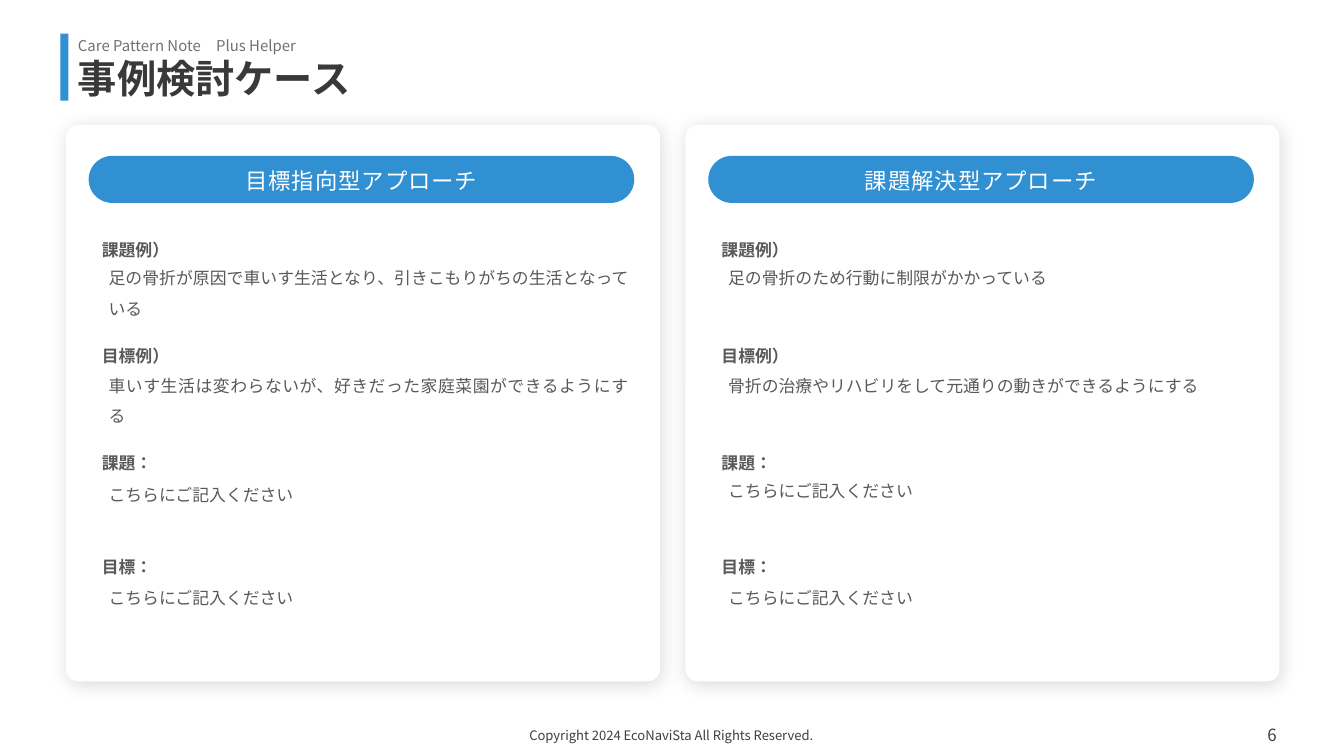
"""Build the case-study slide comparing two care approaches."""
from lxml.etree import SubElement
from pptx import Presentation
from pptx.dml.color import RGBColor
from pptx.enum.lang import MSO_LANGUAGE_ID
from pptx.enum.shapes import MSO_SHAPE
from pptx.enum.text import MSO_ANCHOR, MSO_AUTO_SIZE, PP_ALIGN
from pptx.oxml.ns import qn
from pptx.util import Inches, Pt

FONT = "Noto Sans CJK JP"
COLORS = {"bar": "3190D1", "pill": "3090D2", "white": "FFFFFF", "title": "3A3838",
          "product": "757070", "footer": "3F3F3F", "body": "595959", "shadow": "000000"}

prs = Presentation()
prs.slide_width, prs.slide_height = Inches(10), Inches(10 * 9 / 16)
s = prs.slides.add_slide(prs.slide_layouts[6])


def add_box(left, top, width, height, shape=None, fill=None, radius=None):
    box = [Inches(v) for v in (left, top, width, height)]
    if shape is None:
        return s.shapes.add_textbox(*box)
    sp = s.shapes.add_shape(shape, *box)
    sp.shadow.inherit = False
    sp.fill.solid()
    sp.fill.fore_color.rgb = RGBColor.from_string(COLORS[fill])
    sp.line.fill.background()
    if radius is not None:
        sp.adjustments[0] = radius
    return sp


def write(sp, text, size, color, bold=False, align=PP_ALIGN.LEFT, spacing=None,
          anchor=MSO_ANCHOR.TOP, insets=(0.1, 0.05, 0.1, 0.05)):
    tf = sp.text_frame
    tf.word_wrap = True
    tf.vertical_anchor = anchor
    tf.margin_left, tf.margin_top, tf.margin_right, tf.margin_bottom = map(Inches, insets)
    tf.text = text
    p = tf.paragraphs[0]
    p.alignment = align
    if spacing:
        p.line_spacing = spacing
    r = p.runs[0]
    r.font.name, r.font.size, r.font.bold = FONT, Pt(size), bold
    r.font.language_id = MSO_LANGUAGE_ID.JAPANESE
    r.font.color.rgb = RGBColor.from_string(COLORS[color])
    SubElement(r._r.get_or_add_rPr(), qn("a:ea"), typeface=FONT)
    return r


write(add_box(0.58, 0.27, 2.07, 0.13), "Care Pattern Note　Plus Helper", 8, "product",
      insets=(0, 0, 0, 0))
add_box(0.45, 0.25, 0.06, 0.5, MSO_SHAPE.RECTANGLE, "bar")
write(add_box(0.58, 0.44, 8.87, 0.33), "事例検討ケース", 21, "title", bold=True, spacing=0.9,
      anchor=MSO_ANCHOR.MIDDLE, insets=(0, 0, 0, 0))

footers = [(7.9, 1.67, "6", 9, PP_ALIGN.RIGHT),
           (2.93, 4.13, "Copyright 2024 EcoNaviSta All Rights Reserved.", 7, PP_ALIGN.CENTER)]
for left, width, text, size, align in footers:
    write(add_box(left, 5.32, width, 0.3), text, size, "footer", align=align,
          anchor=MSO_ANCHOR.MIDDLE, insets=(0.07, 0.04, 0.07, 0.04))

ENTRY = "こちらにご記入ください"
labels = [("課題例）", 1.66), ("目標例）", 2.45), ("課題：", 3.24), ("目標：", 4.02)]
columns = [
    (0.49, "目標指向型アプローチ", [
        ("足の骨折が原因で車いす生活となり、引きこもりがちの生活となっている", 1.87, 0.54),
        ("車いす生活は変わらないが、好きだった家庭菜園ができるようにする", 2.67, 0.54),
        (ENTRY, 3.48, 0.54), (ENTRY, 4.25, 0.54)]),
    (5.1, "課題解決型アプローチ", [
        ("足の骨折のため行動に制限がかかっている", 1.87, 0.31),
        ("骨折の治療やリハビリをして元通りの動きができるようにする", 2.67, 0.31),
        (ENTRY, 3.45, 0.54), (ENTRY, 4.25, 0.54)]),
]
for left, heading, answers in columns:
    card = add_box(left, 0.93, 4.42, 4.14, MSO_SHAPE.ROUNDED_RECTANGLE, "white", 0.022)
    effects = card._element.spPr.find(qn("a:effectLst"))
    shadow = SubElement(effects, qn("a:outerShdw"), blurRad=str(Pt(10)), dist=str(Pt(2)),
                        dir=str(60 * 60000), algn="ctr", rotWithShape="0")
    tint = SubElement(shadow, qn("a:srgbClr"), val=COLORS["shadow"])
    SubElement(tint, qn("a:alpha"), val="15000")

    pill = add_box(left + 0.17, 1.16, 4.06, 0.35, MSO_SHAPE.ROUNDED_RECTANGLE, "pill", 0.5)
    r = write(pill, heading, 12, "white", align=PP_ALIGN.CENTER,
              anchor=MSO_ANCHOR.MIDDLE, insets=(0, 0.02, 0, 0))
    r._r.get_or_add_rPr().set("spc", "50")

    rows = [(0.17, text, top, 0.31, True) for text, top in labels]
    rows += [(0.22, text, top, height, False) for text, top, height in answers]
    for indent, text, top, height, bold in rows:
        sp = add_box(left + indent, top, 4.06, height)
        write(sp, text, 9, "body", bold=bold, align=PP_ALIGN.JUSTIFY, spacing=1.5)
        sp.text_frame.auto_size = MSO_AUTO_SIZE.SHAPE_TO_FIT_TEXT

prs.save("out.pptx")
